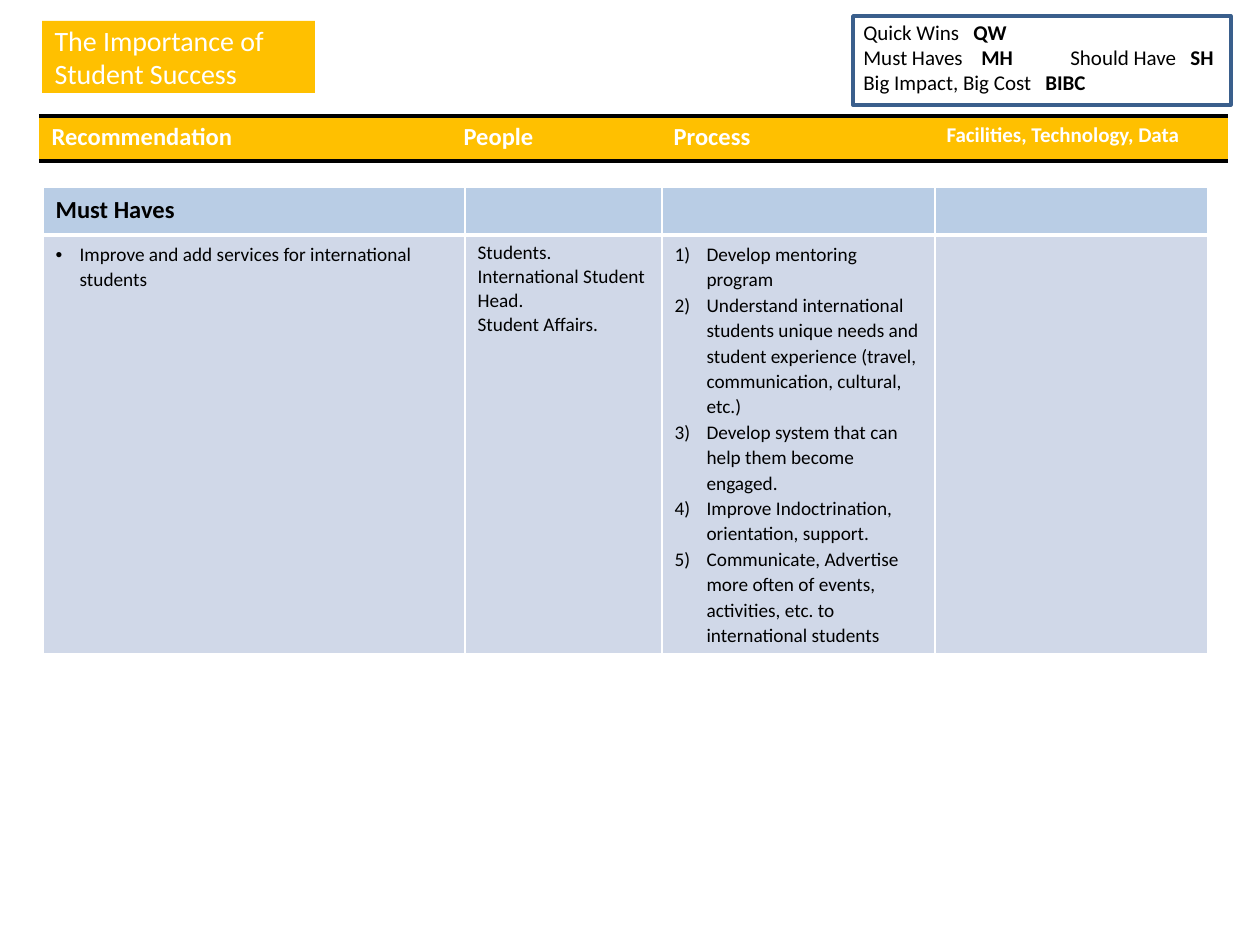
from dataclasses import dataclass

from lxml.etree import SubElement
from pptx import Presentation
from pptx.dml.color import RGBColor
from pptx.enum.shapes import MSO_SHAPE
from pptx.enum.text import MSO_ANCHOR, PP_ALIGN
from pptx.oxml.ns import qn
from pptx.util import Emu, Pt

PX = 914400 / 126
FONT = "Calibri"
PLAIN_TABLE = "{2D5ABB26-0587-4C30-8999-92F81FD0307C}"

WHITE = RGBColor(0xFF, 0xFF, 0xFF)
BLACK = RGBColor(0x00, 0x00, 0x00)
GOLD = RGBColor(0xFF, 0xC0, 0x00)
SKY = RGBColor(0xB9, 0xCD, 0xE5)
PALE = RGBColor(0xD0, 0xD8, 0xE8)
NAVY = RGBColor(0x3A, 0x5F, 0x8C)


@dataclass
class CellText:
    lines: tuple = ()
    size: int = 11
    bold: bool = False
    spacing: float | None = None
    indent: int = 0
    bullet: tuple | None = None  # element name and its attributes


@dataclass
class Row:
    height: int
    fill: RGBColor
    color: RGBColor
    border: RGBColor
    widths: dict  # border side to points
    cells: tuple


@dataclass
class LegendLine:
    labels: tuple  # names and codes in turn
    tabs: tuple


NUMBERED = ("a:buAutoNum", {"type": "arabicParenR"})
DOTTED = ("a:buChar", {"char": "•"})

COLUMN_HEADS = Row(45, GOLD, WHITE, BLACK, {"T": 2, "B": 2}, (
    CellText(("Recommendation",), 14, True),
    CellText(("People",), 14, True),
    CellText(("Process",), 14, True),
    CellText(("Facilities, Technology, Data",), 12, True),
))
CATEGORY = Row(48, SKY, BLACK, WHITE, {"L": 1, "R": 1, "T": 1, "B": 3}, (
    CellText(("Must Haves",), 14, True, 1.07),
    CellText(), CellText(), CellText(),
))
DETAILS = Row(408, PALE, BLACK, WHITE, {"L": 1, "R": 1, "T": 1, "B": 1}, (
    CellText(("Improve and add services for international students",),
             spacing=1.07, indent=24, bullet=DOTTED),
    CellText(("Students.", "International Student Head.", "Student Affairs.")),
    CellText((
        "Develop mentoring program",
        "Understand international students unique needs and student "
        "experience (travel, communication, cultural, etc.)",
        "Develop system that can help them become engaged.",
        "Improve Indoctrination, orientation, support.",
        "Communicate, Advertise more often of events, activities, etc. "
        "to international students",
    ), spacing=1.07, indent=32, bullet=NUMBERED),
    CellText(),
))
LEGEND = (
    LegendLine(("Quick Wins", "QW"), (110,)),
    LegendLine(("Must Haves", "MH", "Should Have", "SH"), (118, 207, 327)),
    LegendLine(("Big Impact, Big Cost", "BIBC"), (182,)),
)


def px(n: int) -> Emu:
    return Emu(round(n * PX))


def style_run(r, size: int, color: RGBColor, bold: bool = False) -> None:
    r.font.name = FONT
    r.font.size = Pt(size)
    r.font.bold = bold
    r.font.color.rgb = color


def place(sp, left: int, top: int, width: int, height: int) -> None:
    sp.left, sp.top, sp.width, sp.height = map(px, (left, top, width, height))


def write_cell(tf, text: CellText, color: RGBColor) -> None:
    if not text.lines:
        # Keeps an empty cell from stretching its row
        SubElement(tf.paragraphs[0]._p, qn("a:endParaRPr"), sz=str(text.size * 100))
        return
    tf.text = "\n".join(text.lines)
    for p in tf.paragraphs:
        if text.spacing:
            p.line_spacing = text.spacing
        if text.bullet:
            tag, attributes = text.bullet
            pPr = p._p.get_or_add_pPr()
            pPr.set("marL", str(px(text.indent)))
            pPr.set("indent", str(-px(text.indent)))
            SubElement(pPr, qn("a:buFont"), typeface="Arial" if text.bullet is DOTTED else FONT)
            SubElement(pPr, qn(tag), attributes)
        style_run(p.runs[0], text.size, color, text.bold)


def add_borders(cell, color: RGBColor, widths: dict) -> None:
    tcPr = cell._tc.get_or_add_tcPr()
    for side, width in widths.items():
        ln = SubElement(tcPr, qn(f"a:ln{side}"), w=str(Pt(width)))
        fill = SubElement(ln, qn("a:solidFill"))
        SubElement(fill, qn("a:srgbClr"), val=str(color))


def add_grid(slide, left: int, top: int, columns: tuple, rows: tuple) -> None:
    height = sum(row.height for row in rows)
    table = slide.shapes.add_table(
        len(rows), len(columns), px(left), px(top), px(sum(columns)), px(height)).table
    table.first_row = table.horz_banding = False
    table._tbl.tblPr.find(qn("a:tableStyleId")).text = PLAIN_TABLE
    for column, width in zip(table.columns, columns):
        column.width = px(width)
    for table_row, row in zip(table.rows, rows):
        table_row.height = px(row.height)
        for cell, text in zip(table_row.cells, row.cells):
            add_borders(cell, row.border, row.widths)
            cell.fill.solid()
            cell.fill.fore_color.rgb = row.fill
            write_cell(cell.text_frame, text, row.color)


def format_title(title) -> None:
    """Turn the title placeholder into a rounded gold label."""
    place(title, 42, 21, 273, 72)
    geom = SubElement(title._element.spPr, qn("a:prstGeom"), prst="roundRect")
    SubElement(geom, qn("a:avLst"))
    title.fill.solid()
    title.fill.fore_color.rgb = GOLD
    tf = title.text_frame
    tf.text = "The Importance of Student Success"
    tf.vertical_anchor = MSO_ANCHOR.MIDDLE
    p = tf.paragraphs[0]
    p.alignment = PP_ALIGN.LEFT
    style_run(p.runs[0], 16, WHITE)


def add_legend(slide) -> None:
    tf = slide.shapes.add_textbox(px(851), px(13), px(378), px(89)).text_frame
    tf.word_wrap = True
    for i, line in enumerate(LEGEND):
        p = tf.add_paragraph() if i else tf.paragraphs[0]
        tabs = SubElement(p._p.get_or_add_pPr(), qn("a:tabLst"))
        for tab in line.tabs:
            SubElement(tabs, qn("a:tab"), pos=str(px(tab)), algn="l")
        for j, label in enumerate(line.labels):
            r = p.add_run()
            r.text = f"\t{label}" if j else label
            style_run(r, 12, BLACK, bold=j % 2 == 1)

    frame = slide.shapes.add_shape(MSO_SHAPE.RECTANGLE, px(853), px(16), px(378), px(89))
    frame.shadow.inherit = False
    frame.fill.background()
    frame.line.color.rgb = NAVY
    frame.line.width = Pt(2)


def main() -> None:
    prs = Presentation()
    prs.slide_width, prs.slide_height = px(1260), px(945)
    slide = prs.slides.add_slide(prs.slide_layouts[5])
    add_grid(slide, 43, 187, (422, 197, 273, 273), (CATEGORY, DETAILS))
    add_grid(slide, 39, 116, (412, 210, 273, 294), (COLUMN_HEADS,))
    format_title(slide.shapes.title)
    add_legend(slide)
    prs.save("out.pptx")


if __name__ == "__main__":
    main()
